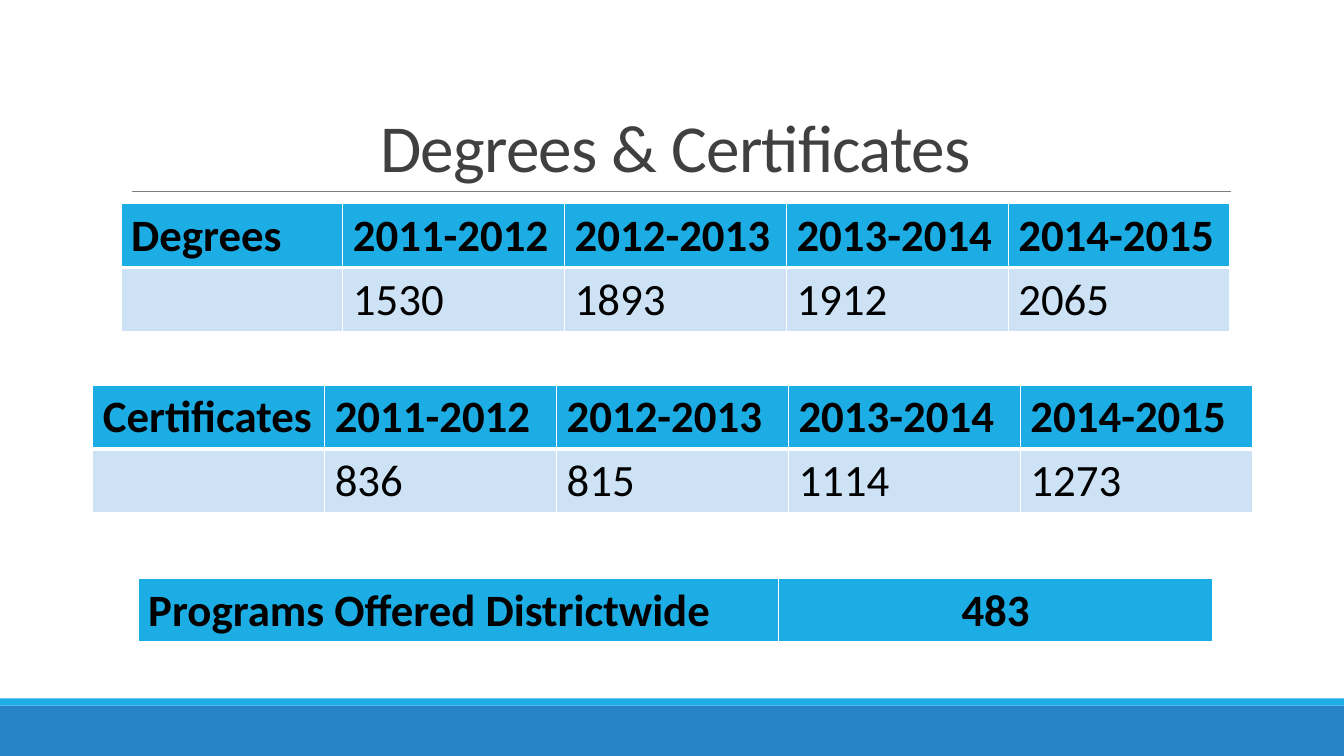
from lxml.etree import SubElement
from pptx import Presentation
from pptx.dml.color import RGBColor
from pptx.enum.shapes import MSO_CONNECTOR, MSO_SHAPE
from pptx.enum.text import MSO_ANCHOR, PP_ALIGN
from pptx.oxml.ns import qn
from pptx.util import Inches, Pt

WIDTH, HEIGHT = 13.33, 7.5
ROW_HEIGHT = 0.63
COLORS = {
    "title": "404040",
    "rule": "808080",
    "text": "000000",
    "header": "1CADE4",
    "body": "CDE3F5",
    "border": "FFFFFF",
    "footer": "2683C6",
}
YEARS = ["2011-2012", "2012-2013", "2013-2014", "2014-2015"]


def color(name):
    """Return the named colour."""
    return RGBColor.from_string(COLORS[name])


def write(frame, text, text_color, alignment=PP_ALIGN.LEFT, **font_format):
    """Write one formatted line into a text frame and return its run."""
    paragraph = frame.paragraphs[0]
    paragraph.alignment = alignment
    run = paragraph.add_run()
    run.text = text
    for name, value in {"name": "Calibri", **font_format}.items():
        setattr(run.font, name, value)
    run.font.color.rgb = color(text_color)
    return run


def add_title(slide, left, top, width, height):
    """Place the title at the bottom of its box, with a rule below."""
    box = slide.shapes.add_textbox(*map(Inches, (left, top, width, height)))
    frame = box.text_frame
    for name, value in {"word_wrap": True, "vertical_anchor": MSO_ANCHOR.BOTTOM}.items():
        setattr(frame, name, value)
    run = write(frame, "Degrees & Certificates", "title", PP_ALIGN.CENTER, size=Pt(48))
    frame.paragraphs[0].line_spacing = 0.85
    run.font._element.set("spc", "-50")
    bottom = top + height
    ends = (left + 0.11, bottom, left + width + 0.01, bottom)
    rule = slide.shapes.add_connector(MSO_CONNECTOR.STRAIGHT, *map(Inches, ends))
    rule.line.color.rgb = color("rule")
    rule.line.width = Pt(0.5)
    SubElement(rule._element.spPr, qn("a:effectLst"))


def add_footer(slide, left, top, width, height):
    """Place the footer band with its thin accent strip on top."""
    strip = 0.07
    bands = [("footer", top + strip, height - strip), ("header", top, strip)]
    for name, band_top, band_height in bands:
        lengths = map(Inches, (left, band_top, width, band_height))
        band = slide.shapes.add_shape(MSO_SHAPE.RECTANGLE, *lengths)
        band.shadow.inherit = False
        band.fill.solid()
        band.fill.fore_color.rgb = color(name)
        band.line.fill.background()


def style_cell(cell, is_header):
    """Give a cell its white borders and its fill."""
    properties = cell._tc.get_or_add_tcPr()
    widths = {"L": 1, "R": 1, "T": 1, "B": 1}
    widths["B" if is_header else "T"] = 3
    for side, width in widths.items():
        line = SubElement(properties, qn(f"a:ln{side}"), w=str(Pt(width)))
        fill = SubElement(line, qn("a:solidFill"))
        SubElement(fill, qn("a:srgbClr"), val=COLORS["border"])
    cell.fill.solid()
    cell.fill.fore_color.rgb = color("header" if is_header else "body")


def add_figures(slide, left, top, widths, rows, alignments):
    """Place a table with a bold header row and plain rows below."""
    lengths = (left, top, sum(widths), ROW_HEIGHT * len(rows))
    frame = slide.shapes.add_table(len(rows), len(widths), *map(Inches, lengths))
    table = frame.table
    for column, width in zip(table.columns, widths):
        column.width = Inches(width)
    for row_index, row in enumerate(rows):
        is_header = row_index == 0
        for column_index, text in enumerate(row):
            cell = table.cell(row_index, column_index)
            style_cell(cell, is_header)
            if text:
                write(cell.text_frame, text, "text", alignments[column_index],
                      size=Pt(32), bold=is_header)


def build_slide(presentation):
    """Build the slide of degrees, certificates and programs."""
    slide = presentation.slides.add_slide(presentation.slide_layouts[6])
    add_footer(slide, 0, 6.93, WIDTH, HEIGHT - 6.93)
    add_title(slide, 1.2, 0.31, 11, 1.59)
    left_aligned = [PP_ALIGN.LEFT] * 5
    degrees = [["Degrees", *YEARS], ["", "1530", "1893", "1912", "2065"]]
    certificates = [["Certificates", *YEARS], ["", "836", "815", "1114", "1273"]]
    programs = [["Programs Offered Districtwide", "483"]]
    add_figures(slide, 1.2, 2.02, [2.2] * 5, degrees, left_aligned)
    add_figures(slide, 0.92, 3.82, [2.3] * 5, certificates, left_aligned)
    add_figures(slide, 1.37, 5.74, [6.35, 4.31], programs,
                [PP_ALIGN.LEFT, PP_ALIGN.CENTER])


def main():
    """Create and save the presentation."""
    presentation = Presentation()
    presentation.slide_width = Inches(WIDTH)
    presentation.slide_height = Inches(HEIGHT)
    build_slide(presentation)
    presentation.save("out.pptx")


if __name__ == "__main__":
    main()
